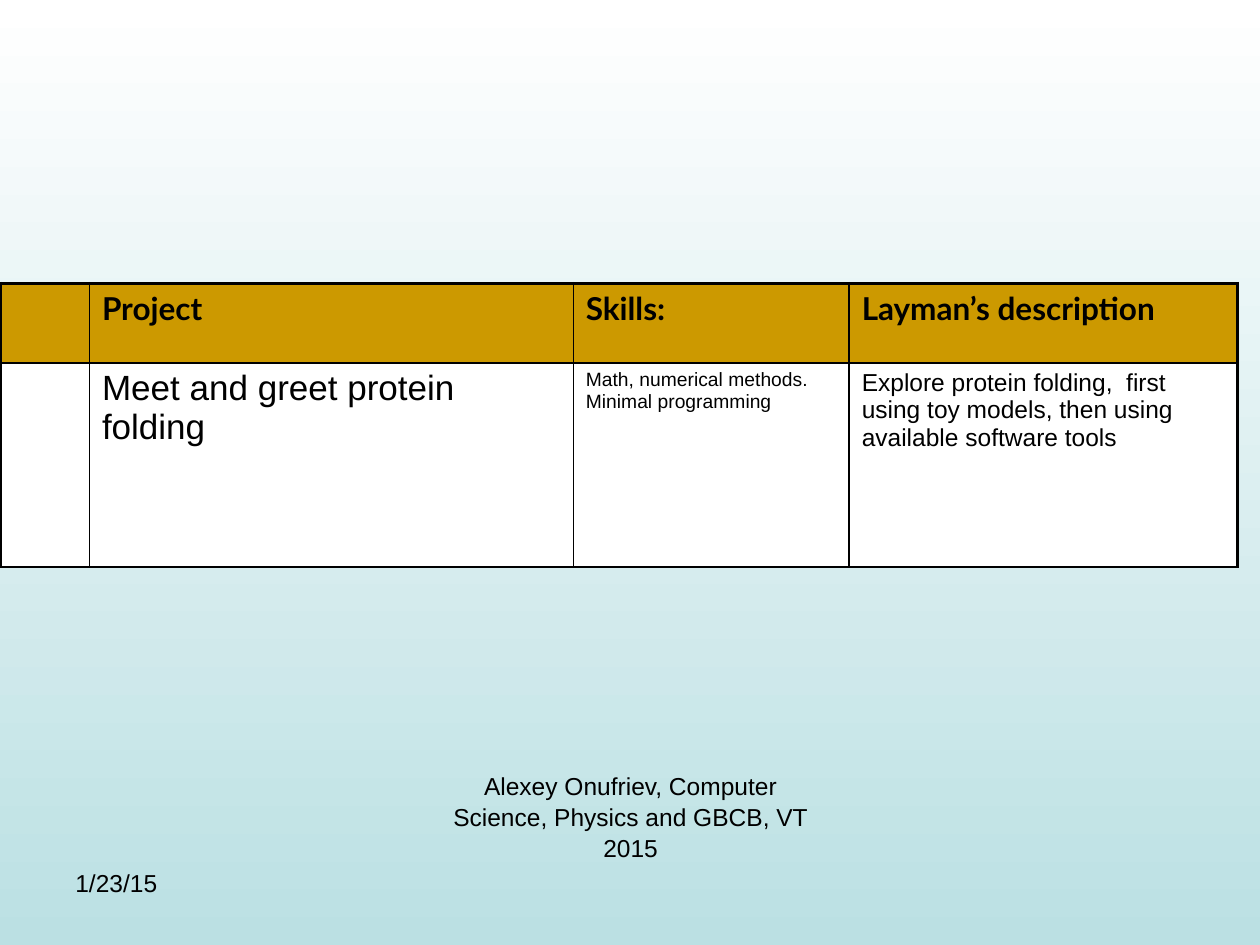
from lxml.etree import SubElement
from pptx import Presentation
from pptx.dml.color import RGBColor as RGB
from pptx.enum.text import PP_ALIGN as Align
from pptx.oxml.ns import qn
from pptx.util import Inches, Pt

COLORS = {"ink": "000000", "header": "CC9900", "paper": "FFFFFF", "mist": "BBE0E3"}
HEADING = {"name": "Lato", "size": Pt(18), "bold": True}
COLUMNS = [0.71, 3.84, 2.19, 3.08]
ROWS = [0.63, 1.62]
HEADERS = ["", "Project", "Skills:", "Layman’s description"]
PROJECT = [
    ("", 18),
    ("Meet and greet protein folding", 20),
    ("Math, numerical methods. Minimal programming", 11),
    ("Explore protein folding,  first using toy models, then using available software tools", 14),
]


class SlideBuilder:
    def __init__(self, slide):
        self.slide = slide
        self.body = {"name": "Arial", "size": Pt(14), "bold": False}

    def background(self, top, bottom):
        fill = self.slide.background.fill
        fill.gradient()
        fill.gradient_angle = 270
        for stop, color in zip(fill.gradient_stops, (top, bottom)):
            stop.color.rgb = RGB.from_string(COLORS[color])

    def add_words(self, frame, text, style):
        para = frame.paragraphs[0]
        span = para.add_run()
        span.text = text
        for key, value in style.items():
            setattr(span.font, key, value)
        span.font.color.rgb = RGB.from_string(COLORS["ink"])
        return para

    def text(self, text, left, top, width, height, align=Align.LEFT):
        box = self.slide.shapes.add_textbox(*map(Inches, (left, top, width, height)))
        box.text_frame.word_wrap = True
        para = self.add_words(box.text_frame, text, self.body)
        para.alignment = align
        para.line_spacing = 1.05

    def border(self, cell, widths):
        properties = cell._tc.get_or_add_tcPr()
        for index, (side, width) in enumerate(widths.items()):
            line = SubElement(properties, qn(f"a:ln{side}"), w=str(Pt(width)))
            fill = SubElement(line, qn("a:solidFill"))
            SubElement(fill, qn("a:srgbClr"), val=COLORS["ink"])
            properties.insert(index, line)

    def table(self, left, top, columns, rows, content):
        size = map(Inches, (left, top, sum(columns), sum(rows)))
        table = self.slide.shapes.add_table(len(rows), len(columns), *size).table
        for column, width in zip(table.columns, columns):
            column.width = Inches(width)
        for row, height in zip(table.rows, rows):
            row.height = Inches(height)
        for r, entries in enumerate(content):
            for c, (text, style) in enumerate(entries):
                cell = table.cell(r, c)
                cell.fill.solid()
                cell.fill.fore_color.rgb = RGB.from_string(COLORS["paper" if r else "header"])
                if text:
                    self.add_words(cell.text_frame, text, style)
                self.border(cell, {
                    "L": 2.25 if c == 0 else 1,
                    "R": 2.25 if c == len(columns) - 1 else 1,
                    "T": 2.25 if r == 0 else 1,
                    "B": 1,
                })


def main():
    deck = Presentation()
    deck.slide_width, deck.slide_height = Inches(10), Inches(7.5)
    page = SlideBuilder(deck.slides.add_slide(deck.slide_layouts[6]))
    page.background("paper", "mist")
    page.text("1/23/15", 0.5, 6.83, 2.33, 0.52)
    page.text("Alexey Onufriev, Computer Science, Physics and GBCB, VT 2015",
              3.42, 6.06, 3.17, 0.52, Align.CENTER)
    header = [(text, HEADING) for text in HEADERS]
    project = [(text, {**page.body, "size": Pt(size)}) for text, size in PROJECT]
    page.table(0, 2.25, COLUMNS, ROWS, [header, project])
    deck.save("out.pptx")


if __name__ == "__main__":
    main()
